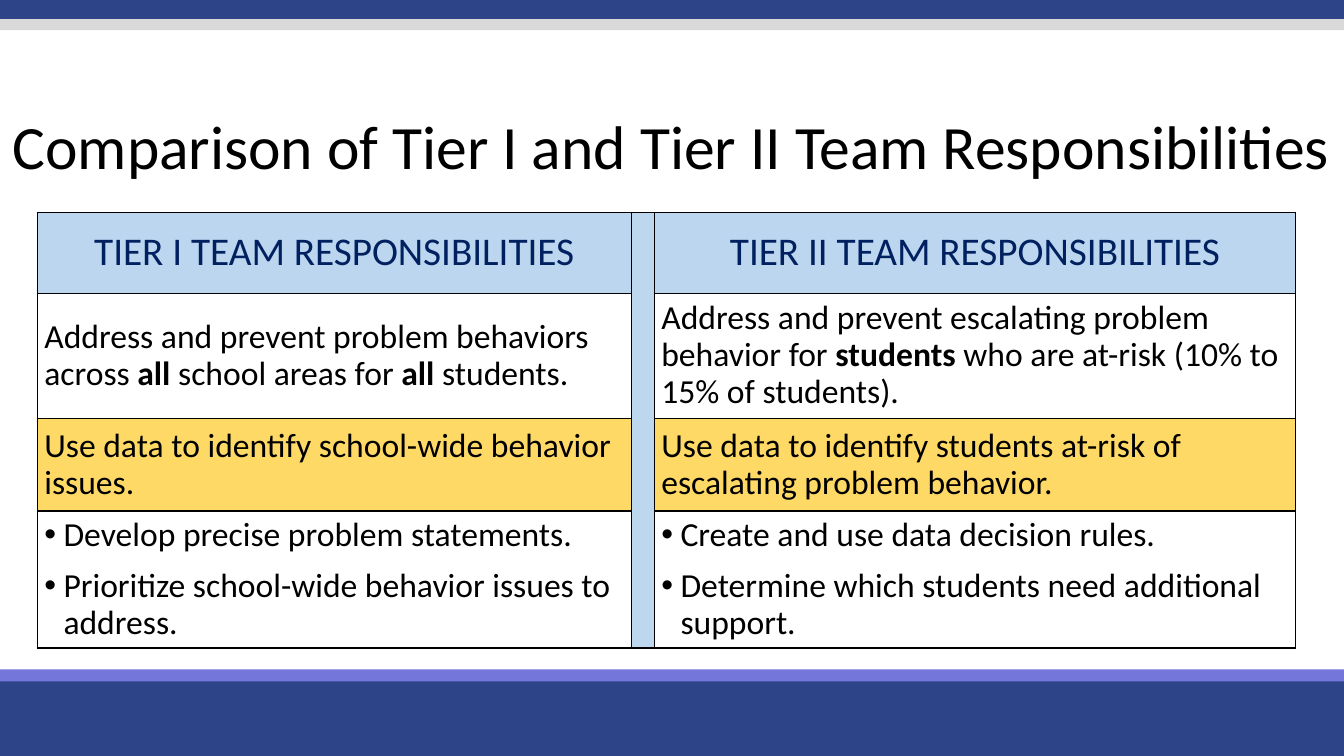
from dataclasses import dataclass

from lxml import etree
from pptx import Presentation
from pptx.dml.color import RGBColor
from pptx.enum.shapes import MSO_SHAPE
from pptx.enum.text import MSO_ANCHOR, PP_ALIGN
from pptx.oxml.ns import qn
from pptx.util import Inches, Pt

RECT = MSO_SHAPE.RECTANGLE
MIDDLE = MSO_ANCHOR.MIDDLE
CENTER, LEFT = PP_ALIGN.CENTER, PP_ALIGN.LEFT
FONT = "Calibri"
BLACK, NAVY, BLUE = "000000", "002060", "2E4488"
WIDTH = 13.33


@dataclass
class Band:
    top: float
    height: float
    color: str


@dataclass
class RowStyle:
    height: float
    fill: str | None = None
    size: int = 24
    color: str = BLACK
    align: PP_ALIGN = LEFT
    bullets: bool = False


@dataclass
class Run:
    text: str
    bold: bool = False


Paragraphs = list[list[Run]]

BANDS = [
    Band(6.7, 0.8, BLUE),
    Band(6.64, 0.12, "7476DA"),
    Band(-0.03, 0.22, BLUE),
    Band(0.19, 0.11, "D9D9D9"),
]
COLUMN_WIDTHS = [5.89, 0.23, 6.36]
ROWS = [
    RowStyle(0.8, "BBD6EE", 28, NAVY, CENTER),
    RowStyle(1.24),
    RowStyle(0.92, "FFD966"),
    RowStyle(1.36, bullets=True),
]
# Column index -> one list of paragraphs per row
CONTENT: dict[int, list[Paragraphs]] = {
    0: [
        [[Run("TIER I TEAM RESPONSIBILITIES")]],
        [[Run("Address and prevent problem behaviors across "), Run("all ", True),
          Run("school areas for "), Run("all", True), Run(" students.")]],
        [[Run("Use data to identify school-wide behavior issues.")]],
        [[Run("Develop precise problem statements.")],
         [Run("Prioritize school-wide behavior issues to address.")]],
    ],
    2: [
        [[Run("TIER II TEAM RESPONSIBILITIES")]],
        [[Run("Address and prevent escalating problem behavior for"),
          Run(" students ", True),
          Run("who are at-risk (10% to 15% of students).")]],
        [[Run("Use data to identify students at-risk of escalating problem behavior.")]],
        [[Run("Create and use data decision rules.")],
         [Run("Determine which students need additional support.")]],
    ],
}


def rgb(color: str) -> RGBColor:
    return RGBColor.from_string(color)


def add_band(s, band: Band) -> None:
    sp = s.shapes.add_shape(RECT, 0, Inches(band.top), Inches(WIDTH), Inches(band.height))
    sp.shadow.inherit = False
    sp.fill.solid()
    sp.fill.fore_color.rgb = rgb(band.color)
    sp.line.fill.background()


def add_bullet(p) -> None:
    pPr = p._p.get_or_add_pPr()
    pPr.set("marL", str(Inches(0.19)))
    pPr.set("indent", str(Inches(-0.19)))
    etree.SubElement(pPr, qn("a:buFont")).set("typeface", "Arial")
    etree.SubElement(pPr, qn("a:buChar")).set("char", "•")


def write(tf, paragraphs: Paragraphs, size: int, color: str, align: PP_ALIGN,
          bullets: bool = False) -> None:
    for i, runs in enumerate(paragraphs):
        p = tf.add_paragraph() if i else tf.paragraphs[0]
        if bullets:
            add_bullet(p)
        p.alignment = align
        p.line_spacing = 0.9
        p.space_before = Pt(10 if i else 0)
        for run in runs:
            r = p.add_run()
            r.text = run.text
            r.font.name = FONT
            r.font.size = Pt(size)
            r.font.bold = run.bold
            r.font.color.rgb = rgb(color)


def style_cell(cell, fill: str | None) -> None:
    # Borders come before the fill in the cell properties
    tcPr = cell._tc.get_or_add_tcPr()
    for side in ("lnL", "lnR", "lnT", "lnB"):
        ln = etree.SubElement(tcPr, qn(f"a:{side}"), w=str(Pt(1)))
        solid = etree.SubElement(ln, qn("a:solidFill"))
        etree.SubElement(solid, qn("a:srgbClr"), val=BLACK)
    if fill:
        cell.fill.solid()
        cell.fill.fore_color.rgb = rgb(fill)
    else:
        cell.fill.background()
    cell.vertical_anchor = MIDDLE
    cell.margin_left = cell.margin_right = Inches(0.07)
    cell.margin_top = cell.margin_bottom = 0


def add_comparison(s) -> None:
    height = sum(row.height for row in ROWS)
    table = s.shapes.add_table(len(ROWS), len(COLUMN_WIDTHS), Inches(0.37), Inches(2.11),
                               Inches(sum(COLUMN_WIDTHS)), Inches(height)).table
    for column, width in zip(table.columns, COLUMN_WIDTHS):
        column.width = Inches(width)
    for i, row in enumerate(ROWS):
        table.rows[i].height = Inches(row.height)
        style_cell(table.cell(i, 1), "BDD7EE")
        for j, texts in CONTENT.items():
            cell = table.cell(i, j)
            style_cell(cell, row.fill)
            write(cell.text_frame, texts[i], row.size, row.color, row.align, row.bullets)
    # Divider column
    table.cell(0, 1).merge(table.cell(len(ROWS) - 1, 1))


def add_title(s, text: str) -> None:
    sp = s.shapes.add_textbox(0, Inches(0.85), Inches(WIDTH), Inches(1.26))
    tf = sp.text_frame
    tf.word_wrap = True
    tf.vertical_anchor = MIDDLE
    write(tf, [[Run(text)]], 44, BLACK, CENTER)


def main() -> None:
    prs = Presentation()
    prs.slide_width, prs.slide_height = Inches(WIDTH), Inches(7.5)
    s = prs.slides.add_slide(prs.slide_layouts[6])
    for band in BANDS:
        add_band(s, band)
    add_comparison(s)
    add_title(s, "Comparison of Tier I and Tier II Team Responsibilities")
    prs.save("out.pptx")


if __name__ == "__main__":
    main()
